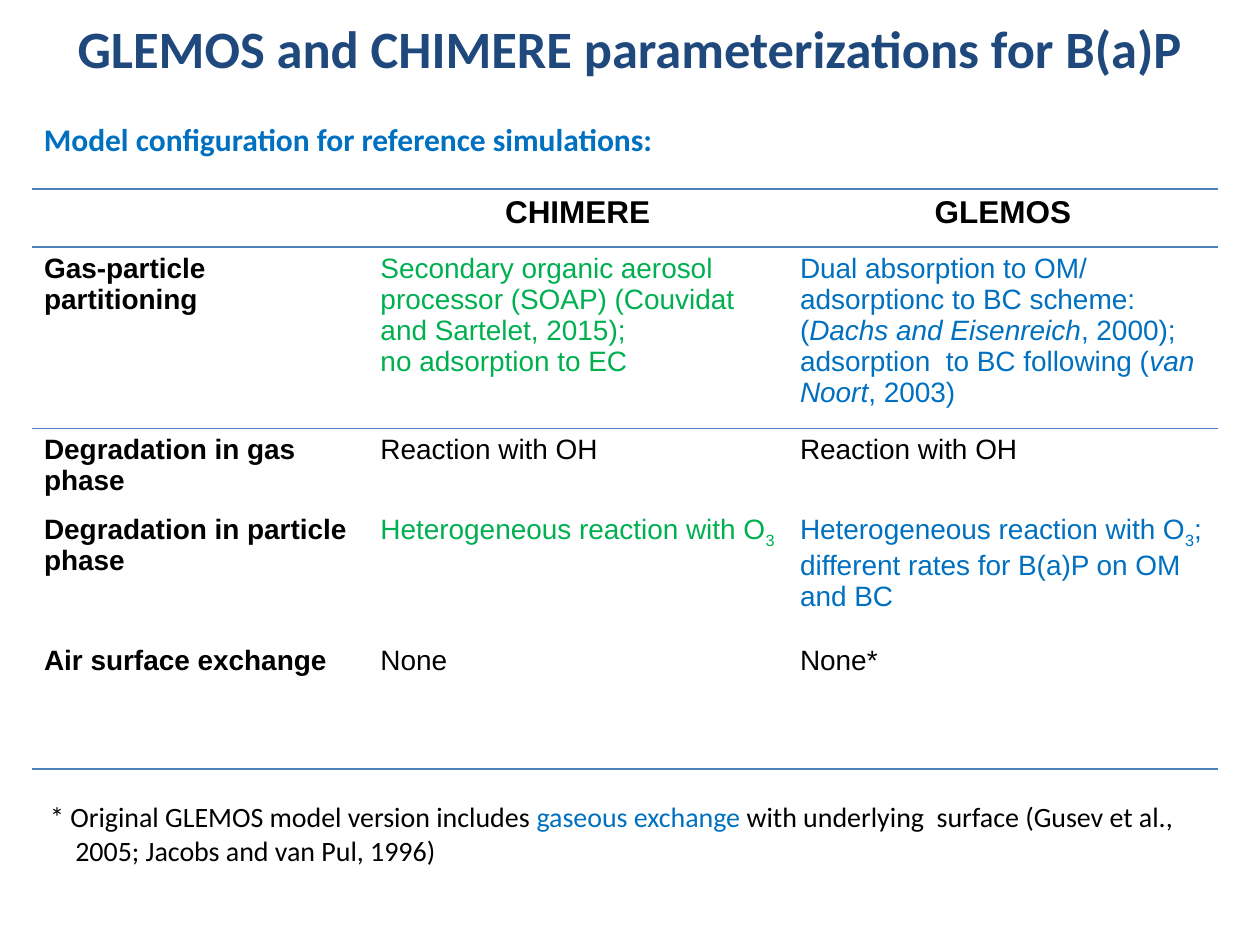
from pptx import Presentation
from pptx.dml.color import RGBColor as RGB
from pptx.enum.text import MSO_AUTO_SIZE as Fit, PP_ALIGN as Align
from pptx.oxml import parse_xml
from pptx.oxml.ns import nsdecls, qn
from pptx.util import Inches, Pt

WIDE, HIGH = 10, 7.5
BLACK = RGB(0x00, 0x00, 0x00)
NAVY = RGB(0x1F, 0x49, 0x7D)
BLUE = RGB(0x00, 0x70, 0xC0)
GREEN = RGB(0x00, 0xB0, 0x50)
RULE = RGB(0x4F, 0x81, 0xBD)

COLS = [2.67, 3.33, 3.42]
ROWS = [0.46, 1.44, 0.63, 1.04, 1.03]

# Each cell: colour, then its pieces as text or (text, style)
OH = (BLACK, "Reaction with OH")
OZONE = ("Heterogeneous reaction with O", ("3", "sub"))
HEADS = ["CHIMERE", "GLEMOS"]
BODY = [
    ("Gas-particle partitioning",
     (GREEN, "Secondary organic aerosol processor (SOAP) (Couvidat "
             "and Sartelet, 2015);\nno adsorption to EC"),
     (BLUE, "Dual absorption to OM/ adsorptionc to BC scheme: (",
      ("Dachs and Eisenreich", "italic"),
      ", 2000); \nadsorption  to BC following (",
      ("van Noort", "italic"), ", 2003)")),
    ("Degradation in gas phase", OH, OH),
    ("Degradation in particle phase", (GREEN, *OZONE),
     (BLUE, *OZONE, "; different rates for B(a)P on OM and BC")),
    ("Air surface exchange", (BLACK, "None"), (BLACK, "None*")),
]


def set_font(para, name, size, color, bold=False):
    font = para.font
    font.name, font.size, font.bold = name, Pt(size), bold
    font.color.rgb = color


def add_piece(para, piece):
    text, style = (piece, None) if isinstance(piece, str) else piece
    for i, line in enumerate(text.split("\n")):
        if i:
            para.add_line_break()
        run = para.add_run()
        run.text = line
        if style == "italic":
            run.font.italic = True
        elif style == "sub":
            run.font._element.set("baseline", "-25000")


def add_text(slide, left, top, width, height, size, color, bold=False, hang=0):
    """Add a wrapped text box, placed by shares of the slide."""
    box = slide.shapes.add_textbox(
        Inches(left * WIDE), Inches(top * HIGH),
        Inches(width * WIDE), Inches(height * HIGH))
    frame = box.text_frame
    frame.word_wrap = True
    frame.auto_size = Fit.SHAPE_TO_FIT_TEXT
    para = frame.paragraphs[0]
    set_font(para, "Calibri", size, color, bold)
    if hang:
        props = para._p.get_or_add_pPr()
        props.set("marL", str(Inches(hang)))
        props.set("indent", str(-Inches(hang)))
    return para


def add_rule(cell, side):
    line = parse_xml(
        f'<a:{side} {nsdecls("a")} w="{Pt(1)}"><a:solidFill>'
        f'<a:srgbClr val="{RULE}"/></a:solidFill></a:{side}>')
    props = cell._tc.get_or_add_tcPr()
    # Borders must stand before the fill
    spot = len(props.findall(qn("a:lnT")))
    props.insert(spot, line)


def fill_cell(cell, pieces, color=BLACK, size=16, bold=False):
    para = cell.text_frame.paragraphs[0]
    set_font(para, "Arial", size, color, bold)
    for piece in pieces:
        add_piece(para, piece)
    return para


def add_grid(slide):
    shape = slide.shapes.add_table(
        len(ROWS), len(COLS), Inches(0.25), Inches(1.5),
        Inches(sum(COLS)), Inches(sum(ROWS)))
    table = shape.table
    table.first_row = table.horz_banding = False
    # Plain style without grid lines
    style = table._tbl.tblPr.find(qn("a:tableStyleId"))
    style.text = "{2D5ABB26-0587-4C30-8999-92F81FD0307C}"
    for col, width in zip(table.columns, COLS):
        col.width = Inches(width)
    for row, height in zip(table.rows, ROWS):
        row.height = Inches(height)
    for cell in table.iter_cells():
        cell.fill.background()

    # Header row
    for c, head in enumerate(HEADS, 1):
        para = fill_cell(table.cell(0, c), [head], size=18, bold=True)
        para.alignment = Align.CENTER

    # Body rows
    for r, (label, *cells) in enumerate(BODY, 1):
        fill_cell(table.cell(r, 0), [label], bold=True)
        for c, (color, *pieces) in enumerate(cells, 1):
            fill_cell(table.cell(r, c), pieces, color)

    # Rules around the header and under the last row
    for c in range(len(COLS)):
        add_rule(table.cell(0, c), "lnT")
        add_rule(table.cell(0, c), "lnB")
        add_rule(table.cell(1, c), "lnT")
        add_rule(table.cell(len(ROWS) - 1, c), "lnB")


def main():
    deck = Presentation()
    deck.slide_width, deck.slide_height = Inches(WIDE), Inches(HIGH)
    slide = deck.slides.add_slide(deck.slide_layouts[6])

    # Subtitle
    para = add_text(slide, 0.025, 0.12, 0.56, 0.05, 18, BLUE, True, 0.39)
    para.space_before = Pt(5)
    add_piece(para, "Model configuration for reference simulations:")

    add_grid(slide)

    # Title
    para = add_text(slide, 0, 0.01, 1, 0.08, 30, NAVY, True)
    para.alignment = Align.CENTER
    add_piece(para, "GLEMOS and CHIMERE parameterizations for B(a)P")

    # Footnote
    para = add_text(slide, 0.03, 0.84, 0.92, 0.09, 16, BLACK, hang=0.2)
    add_piece(para, "* Original GLEMOS model version includes ")
    add_piece(para, "gaseous exchange")
    para.runs[-1].font.color.rgb = BLUE
    add_piece(para, " with underlying  surface (Gusev et al., 2005; "
                    "Jacobs and van Pul, 1996)")

    deck.save("out.pptx")


if __name__ == "__main__":
    main()
